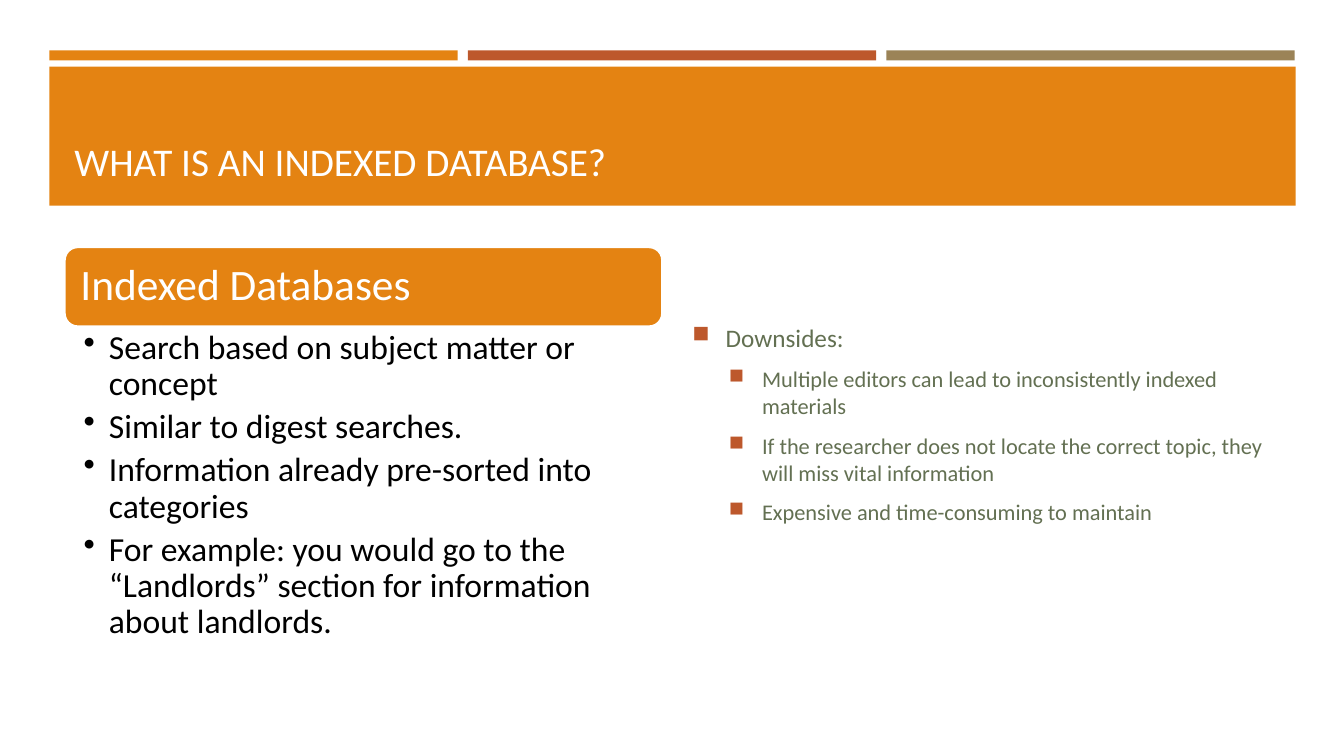
from dataclasses import dataclass

from lxml import etree
from pptx import Presentation
from pptx.dml.color import RGBColor
from pptx.enum.shapes import MSO_SHAPE
from pptx.enum.text import MSO_ANCHOR, PP_ALIGN
from pptx.oxml.ns import qn
from pptx.util import Inches, Pt

RECT = MSO_SHAPE.RECTANGLE
ROUND = MSO_SHAPE.ROUNDED_RECTANGLE
TOP, MIDDLE, BOTTOM = MSO_ANCHOR.TOP, MSO_ANCHOR.MIDDLE, MSO_ANCHOR.BOTTOM
LEFT = PP_ALIGN.LEFT


@dataclass(frozen=True)
class Theme:
    font: str = "Calibri"
    orange: str = "E48312"
    rust: str = "BD582C"
    tan: str = "9B8357"
    green: str = "637052"
    white: str = "FFFFFF"
    black: str = "000000"
    title: int = 28
    head: int = 31
    list: int = 24
    body: int = 18
    sub: int = 16


def add_bullet(para, mark, indent, hang, color=None, scale=None):
    props = para._p.get_or_add_pPr()
    props.set("marL", str(Inches(indent)))
    props.set("indent", str(-Inches(hang)))
    if color:
        tint = etree.SubElement(props, qn("a:buClr"))
        etree.SubElement(tint, qn("a:srgbClr")).set("val", color)
    if scale:
        etree.SubElement(props, qn("a:buSzPct")).set("val", str(scale * 1000))
    etree.SubElement(props, qn("a:buChar")).set("char", mark)


def write(frame, text, *, size, color, font, first=False, line=None,
          before=0, after=0, level=0, bullet=None):
    """Put one formatted paragraph into a text frame."""
    para = frame.paragraphs[0] if first else frame.add_paragraph()
    para.alignment = LEFT
    para.level = level
    para.space_before, para.space_after = Pt(before), Pt(after)
    if line:
        para.line_spacing = line
    if bullet:
        add_bullet(para, **bullet)
    run = para.add_run()
    run.text = text
    run.font.name, run.font.size = font, Pt(size)
    run.font.color.rgb = RGBColor.from_string(color)


class Page:
    def __init__(self, slide, theme):
        self.slide, self.theme = slide, theme

    def block(self, box, fill, kind=RECT, edge=None):
        shape = self.slide.shapes.add_shape(kind, *map(Inches, box))
        shape.shadow.inherit = False
        shape.fill.solid()
        shape.fill.fore_color.rgb = RGBColor.from_string(fill)
        if edge:
            shape.line.color.rgb = RGBColor.from_string(edge)
            shape.line.width = Pt(1.75)
        else:
            shape.line.fill.background()
        return shape

    def fill(self, frame, items, anchor=TOP, inset=(0.1, 0.05, 0.1, 0.05)):
        frame.word_wrap = True
        frame.vertical_anchor = anchor
        (frame.margin_left, frame.margin_top,
         frame.margin_right, frame.margin_bottom) = map(Inches, inset)
        for i, (text, style) in enumerate(items):
            write(frame, text, font=self.theme.font, first=i == 0, **style)

    def text(self, box, items, **layout):
        shape = self.slide.shapes.add_textbox(*map(Inches, box))
        self.fill(shape.text_frame, items, **layout)


def main():
    deck = Presentation()
    deck.slide_width, deck.slide_height = Inches(13.33), Inches(7.5)
    theme = Theme()
    page = Page(deck.slides.add_slide(deck.slide_layouts[6]), theme)

    # Top bars and title band
    for i, color in enumerate((theme.orange, theme.rust, theme.tan)):
        page.block((0.49 + i * 4.15, 0.5, 4.05, 0.1), color)
    page.block((0.49, 0.66, 12.36, 1.38), theme.orange)
    title = dict(size=theme.title, color=theme.white)
    page.text((0.64, 0.8, 12.06, 1.08),
              [("WHAT IS AN INDEXED DATABASE?", title)], anchor=BOTTOM)

    # Left column: heading and list
    head = page.block((0.64, 2.45, 5.93, 0.79), theme.orange, ROUND, theme.white)
    style = dict(size=theme.head, color=theme.white, line=0.9)
    page.fill(head.text_frame, [("Indexed Databases", style)],
              anchor=MIDDLE, inset=(0.12, 0, 0.12, 0))
    point = dict(size=theme.list, color=theme.black, line=0.9, after=4.8,
                 level=1, bullet=dict(mark="•", indent=0.25, hang=0.25))
    points = (
        "Search based on subject matter or concept",
        "Similar to digest searches.",
        "Information already pre-sorted into categories",
        "For example: you would go to the “Landlords” section for "
        "information about landlords.",
    )
    page.text((0.64, 3.24, 5.93, 3.16), [(p, point) for p in points],
              inset=(0.19, 0.04, 0.24, 0.04))

    # Right column: downsides
    square = dict(mark="■", hang=0.33, color=theme.rust, scale=92)
    lead = dict(size=theme.body, color=theme.green, before=3.6, after=6,
                bullet=dict(square, indent=0.33))
    sub = dict(size=theme.sub, color=theme.green, before=3.2, after=6,
               level=1, bullet=dict(square, indent=0.69))
    downs = (
        "Multiple editors can lead to inconsistently indexed materials",
        "If the researcher does not locate the correct topic, they will "
        "miss vital information",
        "Expensive and time-consuming to maintain",
    )
    page.text((6.77, 2.44, 5.93, 3.53),
              [("Downsides:", lead)] + [(d, sub) for d in downs],
              anchor=MIDDLE)

    deck.save("out.pptx")


if __name__ == "__main__":
    main()
